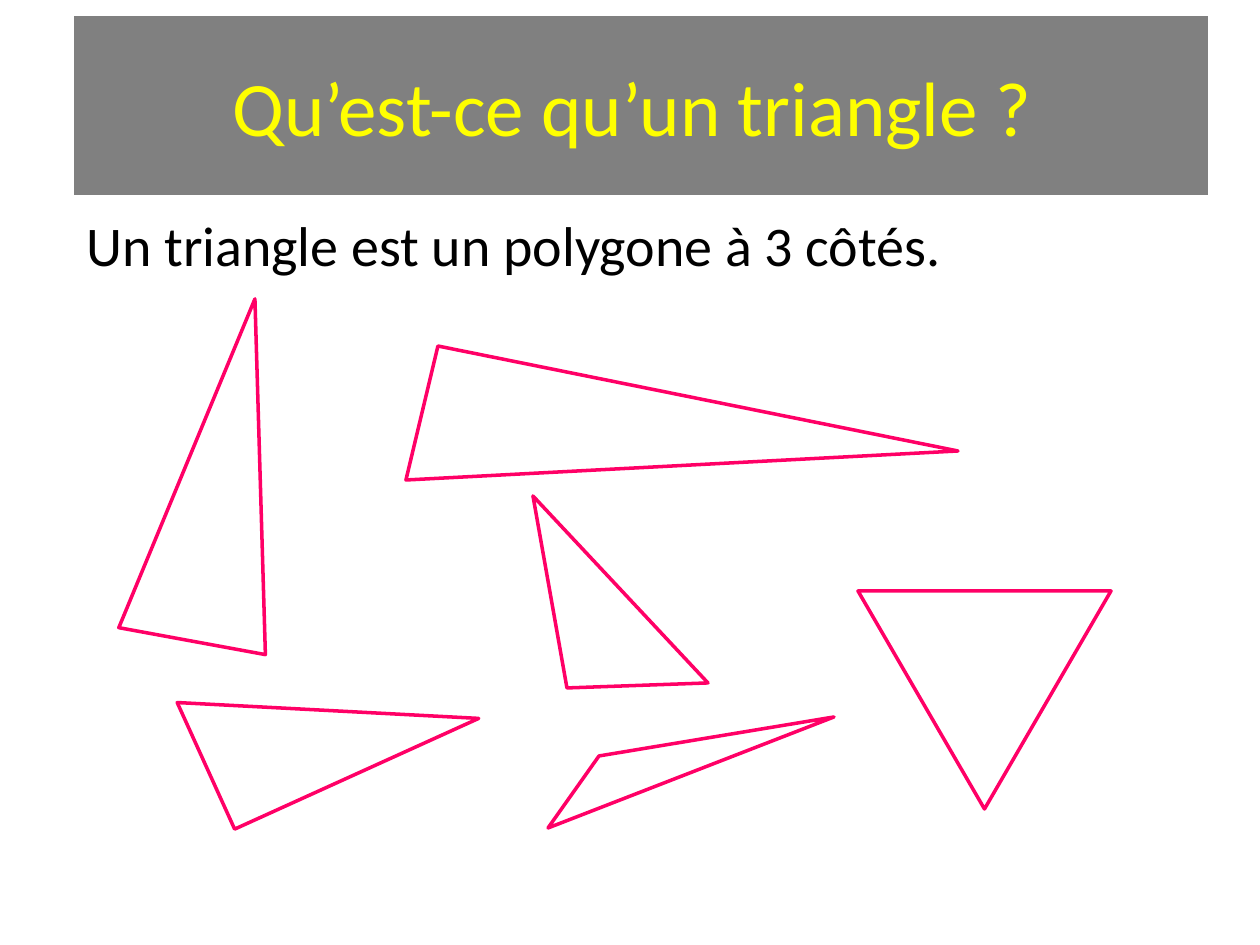
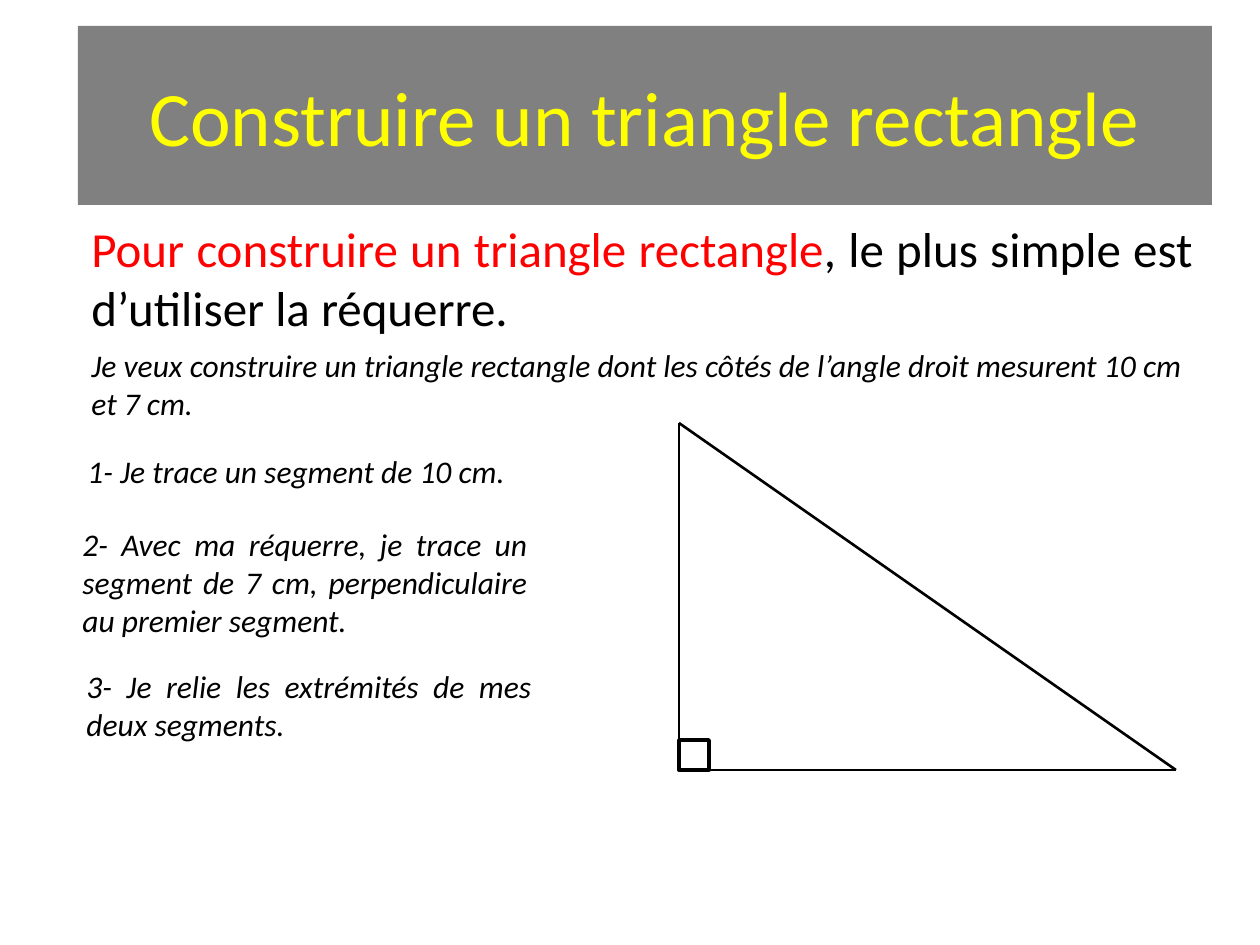
from lxml import etree
from pptx import Presentation
from pptx import util as u
from pptx.dml.color import RGBColor
from pptx.enum import shapes, text
from pptx.oxml.ns import qn

PX = 914400 / 126
FONT = "Calibri"
COLORS = {"band": "808080", "title": "FFFF00", "ink": "000000", "key": "FF0000",
          "paper": "FFFFFF", "triangle": "FF0066"}
TITLE_ONLY = 5


def px(n):
    return u.Emu(round(n * PX))


def rgb(name):
    return RGBColor.from_string(COLORS[name])


def outline(sp, color):
    sp.shadow.inherit = False
    sp.fill.solid()
    sp.fill.fore_color.rgb = rgb("paper")
    sp.line.color.rgb = rgb(color)
    sp.line.width = u.Pt(2)


def titled_slide(prs, title, x, y):
    s = prs.slides.add_slide(prs.slide_layouts[TITLE_ONLY])
    sp = s.shapes.title
    sp.left, sp.top, sp.width, sp.height = map(px, (x, y, 1134, 179))
    sp.fill.solid()
    sp.fill.fore_color.rgb = rgb("band")
    tf = sp.text_frame
    tf.text = title
    tf.vertical_anchor = text.MSO_ANCHOR.MIDDLE
    p = tf.paragraphs[0]
    p.alignment = text.PP_ALIGN.CENTER
    p.font.name, p.font.size = FONT, u.Pt(44)
    p.font.color.rgb = rgb("title")
    return s


def add_text(s, box, runs, size, italic=False):
    """Justified paragraph; runs are (words, colour) pairs."""
    tf = s.shapes.add_textbox(*map(px, box)).text_frame
    tf.word_wrap = True
    p = tf.paragraphs[0]
    p.alignment = text.PP_ALIGN.JUSTIFY
    p.font.name, p.font.size, p.font.italic = FONT, u.Pt(size), italic
    for words, color in runs:
        r = p.add_run()
        r.text = words
        r.font.color.rgb = rgb(color)


def add_line(s, start, end):
    c = s.shapes.add_connector(shapes.MSO_CONNECTOR.STRAIGHT, *map(px, start + end))
    c.line.color.rgb = rgb("ink")
    c.line.width = u.Pt(1.5)
    etree.SubElement(c._element.spPr, qn("a:effectLst"))


def triangle_gallery(s, left, top):
    isosceles = shapes.MSO_SHAPE.ISOSCELES_TRIANGLE
    right = shapes.MSO_SHAPE.RIGHT_TRIANGLE
    # Regular triangles: kind, x, y, width, height, rotation
    for kind, x, y, w, h, angle in (
        (isosceles, 31, 0, 149, 348, 10.4),
        (isosceles, 740, 295, 253, 218, 180),
        (right, 76, 345, 268, 139, 335.6),
    ):
        sp = s.shapes.add_shape(kind, *map(px, (left + x, top + y, w, h)))
        sp.rotation = angle
        outline(sp, "triangle")
    # Scalene triangles: three corners each
    for corners in (
        ((320, 50), (288, 184), (840, 155)),
        ((430, 532), (481, 460), (716, 421)),
        ((449, 392), (415, 200), (590, 387)),
    ):
        first, *rest = [(left + x, top + y) for x, y in corners]
        builder = s.shapes.build_freeform(*first, scale=PX)
        builder.add_line_segments(rest, close=True)
        outline(builder.convert_to_shape(), "triangle")


def right_triangle(s, left, top, width, height, mark=30):
    apex, corner, end = (left, top), (left, top + height), (left + width, top + height)
    add_line(s, corner, end)
    add_line(s, apex, corner)
    # Right-angle mark
    sp = s.shapes.add_shape(shapes.MSO_SHAPE.RECTANGLE,
                            *map(px, (left, top + height - mark, mark, mark)))
    outline(sp, "ink")
    add_line(s, apex, end)


def definition_slide(prs):
    s = titled_slide(prs, "Qu’est-ce qu’un triangle ? ", 74, 16)
    add_text(s, (74, 204, 1131, 81),
             [("Un triangle est un polygone à 3 côtés.", "ink")], 32)
    triangle_gallery(s, 118, 296)


def construction_slide(prs):
    s = titled_slide(prs, "Construire un triangle rectangle", 78, 26)
    add_text(s, (79, 212, 1126, 132),
             [("Pour construire un triangle rectangle", "key"),
              (", le plus simple est d’utiliser la réquerre.", "ink")], 28)
    # Task and steps
    for box, words in (
        ((79, 340, 1116, 89), "Je veux construire un triangle rectangle dont les côtés "
                              "de l’angle droit mesurent 10 cm et 7 cm."),
        ((75, 446, 446, 50), "1- Je trace un segment de 10 cm."),
        ((70, 519, 470, 127), "2- Avec ma réquerre, je trace un segment de 7 cm, "
                              "perpendiculaire au premier segment."),
        ((74, 661, 470, 89), "3- Je relie les extrémités de mes deux segments."),
    ):
        add_text(s, box, [(words, "ink")], 18, italic=True)
    right_triangle(s, 679, 423, 497, 347)


def main():
    prs = Presentation()
    prs.slide_width, prs.slide_height = px(1260), px(945)
    definition_slide(prs)
    construction_slide(prs)
    prs.save("out.pptx")


if __name__ == "__main__":
    main()
